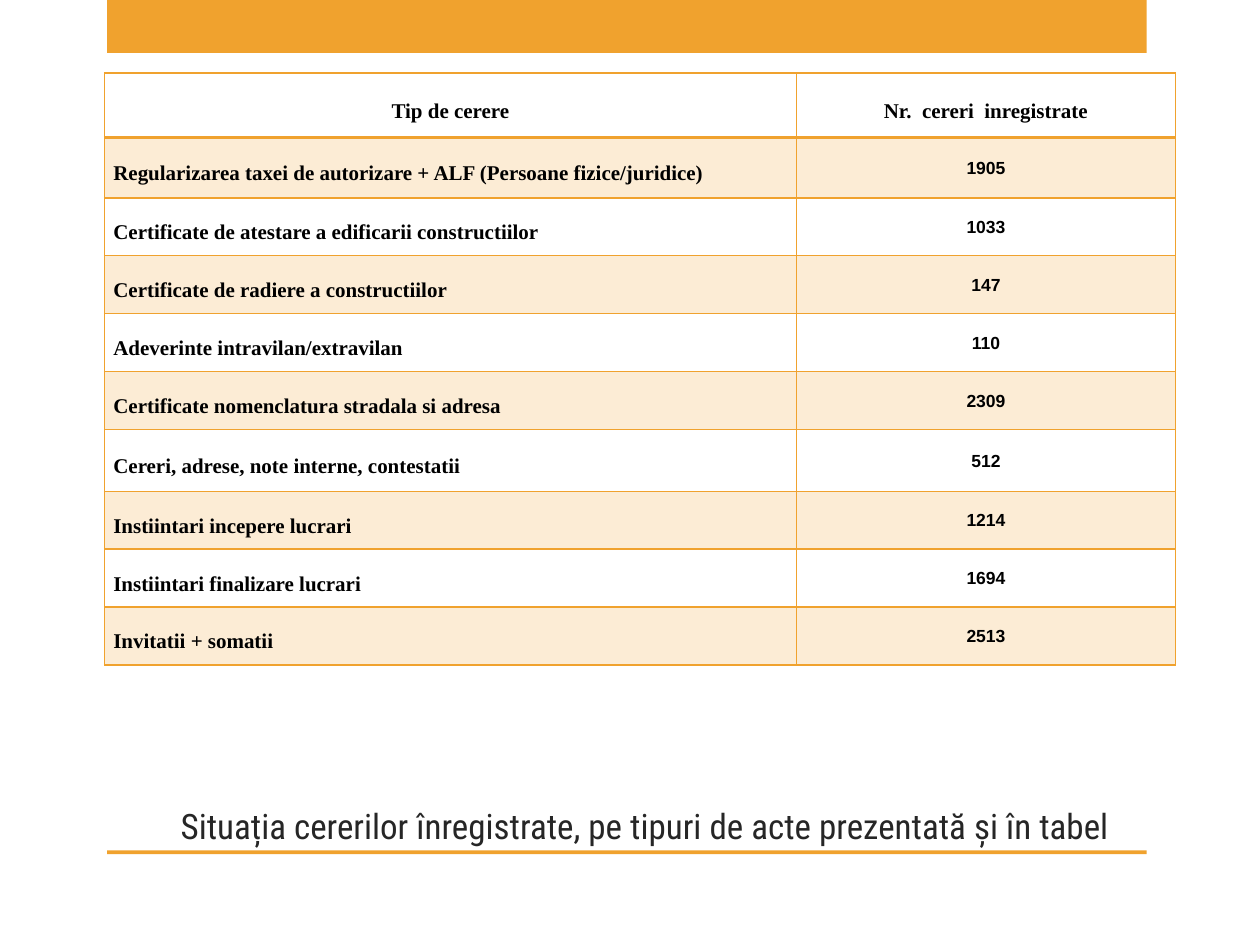
import dataclasses

import lxml.etree
import pptx
import pptx.dml.color
import pptx.enum.shapes
import pptx.enum.text
import pptx.oxml.ns
import pptx.util

Inches = pptx.util.Inches
Align = pptx.enum.text.PP_ALIGN
Anchor = pptx.enum.text.MSO_ANCHOR


@dataclasses.dataclass(frozen=True)
class Theme:
    accent: str = "F0A22E"
    ink: str = "000000"
    title_ink: str = "262626"
    title_font: str = "Roboto Condensed"
    label_font: str = "Times New Roman"
    number_font: str = "Arial"
    title_size: int = 20
    label_size: int = 12
    number_size: int = 10
    band_opacity: int = 20
    rule: int = 1
    header_rule: int = 2


THEME = Theme()
HEADER = ("Tip de cerere", "Nr.  cereri  inregistrate")
REQUESTS = (
    ("Regularizarea taxei de autorizare + ALF (Persoane fizice/juridice)", 1905),
    ("Certificate de atestare a edificarii constructiilor", 1033),
    ("Certificate de radiere a constructiilor", 147),
    ("Adeverinte intravilan/extravilan", 110),
    ("Certificate nomenclatura stradala si adresa", 2309),
    ("Cereri, adrese, note interne, contestatii", 512),
    ("Instiintari incepere lucrari", 1214),
    ("Instiintari finalizare lucrari", 1694),
    ("Invitatii + somatii", 2513),
)
COLUMNS = (5.49, 3.01)
ROWS = (0.51, 0.48, 0.46, 0.46, 0.46, 0.46, 0.49, 0.46, 0.46, 0.46)


def color(code):
    return pptx.dml.color.RGBColor.from_string(code)


def child(parent, tag, **attributes):
    return lxml.etree.SubElement(parent, pptx.oxml.ns.qn(tag), **attributes)


def add_bar(page, top, height):
    bar = page.shapes.add_shape(
        pptx.enum.shapes.MSO_SHAPE.RECTANGLE,
        Inches(0.85), Inches(top), Inches(8.25), Inches(height))
    bar.shadow.inherit = False
    bar.fill.solid()
    bar.fill.fore_color.rgb = color(THEME.accent)
    bar.line.fill.background()


def add_span(para, text, font, size, ink, bold=False):
    span = para.add_run()
    span.text = text
    span.font.name = font
    span.font.size = pptx.util.Pt(size)
    span.font.bold = bold
    span.font.color.rgb = color(ink)


def add_title(page, text):
    box = page.shapes.add_textbox(
        Inches(0.83), Inches(6.17), Inches(8.58), Inches(0.58))
    frame = box.text_frame
    frame.word_wrap = True
    frame.vertical_anchor = Anchor.BOTTOM
    frame.margin_bottom = Inches(0.03)
    para = frame.paragraphs[0]
    para.alignment = Align.CENTER
    add_span(para, text, THEME.title_font, THEME.title_size, THEME.title_ink)


def set_margins(cell, side, top):
    cell.margin_left = cell.margin_right = Inches(side)
    cell.margin_top = Inches(top)
    cell.margin_bottom = 0


def write_label(cell, text, alignment):
    set_margins(cell, 0.07, 0)
    para = cell.text_frame.paragraphs[0]
    para.alignment = alignment
    para.line_spacing = 1.5
    para.space_after = pptx.util.Pt(9)
    add_span(para, text, THEME.label_font, THEME.label_size, THEME.ink, True)


def write_number(cell, value):
    set_margins(cell, 0.01, 0.01)
    para = cell.text_frame.paragraphs[0]
    para.alignment = Align.CENTER
    add_span(para, str(value), THEME.number_font, THEME.number_size,
             THEME.ink, True)


def shade(cell, banded):
    if not banded:
        cell.fill.background()
        return
    cell.fill.solid()
    cell.fill.fore_color.rgb = color(THEME.accent)
    tint = cell._tc.tcPr.find(".//" + pptx.oxml.ns.qn("a:srgbClr"))
    child(tint, "a:alpha", val=str(THEME.band_opacity * 1000))


def set_borders(cell, top, bottom):
    widths = {"a:lnL": THEME.rule, "a:lnR": THEME.rule,
              "a:lnT": top, "a:lnB": bottom}
    properties = cell._tc.get_or_add_tcPr()
    # Border lines must come before the fill
    for place, (tag, width) in enumerate(widths.items()):
        line = child(properties, tag, w=str(pptx.util.Pt(width)))
        child(child(line, "a:solidFill"), "a:srgbClr", val=THEME.accent)
        properties.insert(place, line)


def add_request_table(page):
    table = page.shapes.add_table(
        len(ROWS), len(COLUMNS), Inches(0.83), Inches(0.58),
        Inches(sum(COLUMNS)), Inches(sum(ROWS))).table
    table.first_row = table.horz_banding = False
    for column, width in zip(table.columns, COLUMNS):
        column.width = Inches(width)
    for row, height in zip(table.rows, ROWS):
        row.height = Inches(height)

    # Wording
    for column, text in enumerate(HEADER):
        write_label(table.cell(0, column), text, Align.CENTER)
    for row, (label, count) in enumerate(REQUESTS, start=1):
        write_label(table.cell(row, 0), label, Align.LEFT)
        write_number(table.cell(row, 1), count)

    # Bands and rules
    for index, row in enumerate(table.rows):
        top = THEME.header_rule if index == 1 else THEME.rule
        bottom = THEME.header_rule if index == 0 else THEME.rule
        for cell in row.cells:
            cell.vertical_anchor = Anchor.MIDDLE
            shade(cell, index % 2 == 1)
            set_borders(cell, top, bottom)


def main():
    deck = pptx.Presentation()
    deck.slide_width, deck.slide_height = Inches(10), Inches(7.5)
    page = deck.slides.add_slide(deck.slide_layouts[6])
    # Top band and rule under the title
    add_bar(page, 0, 0.42)
    add_bar(page, 6.75, 0.03)
    add_title(page, "Situația cererilor înregistrate, pe tipuri de acte "
                    "prezentată și în tabel")
    add_request_table(page)
    deck.save("out.pptx")


if __name__ == "__main__":
    main()
